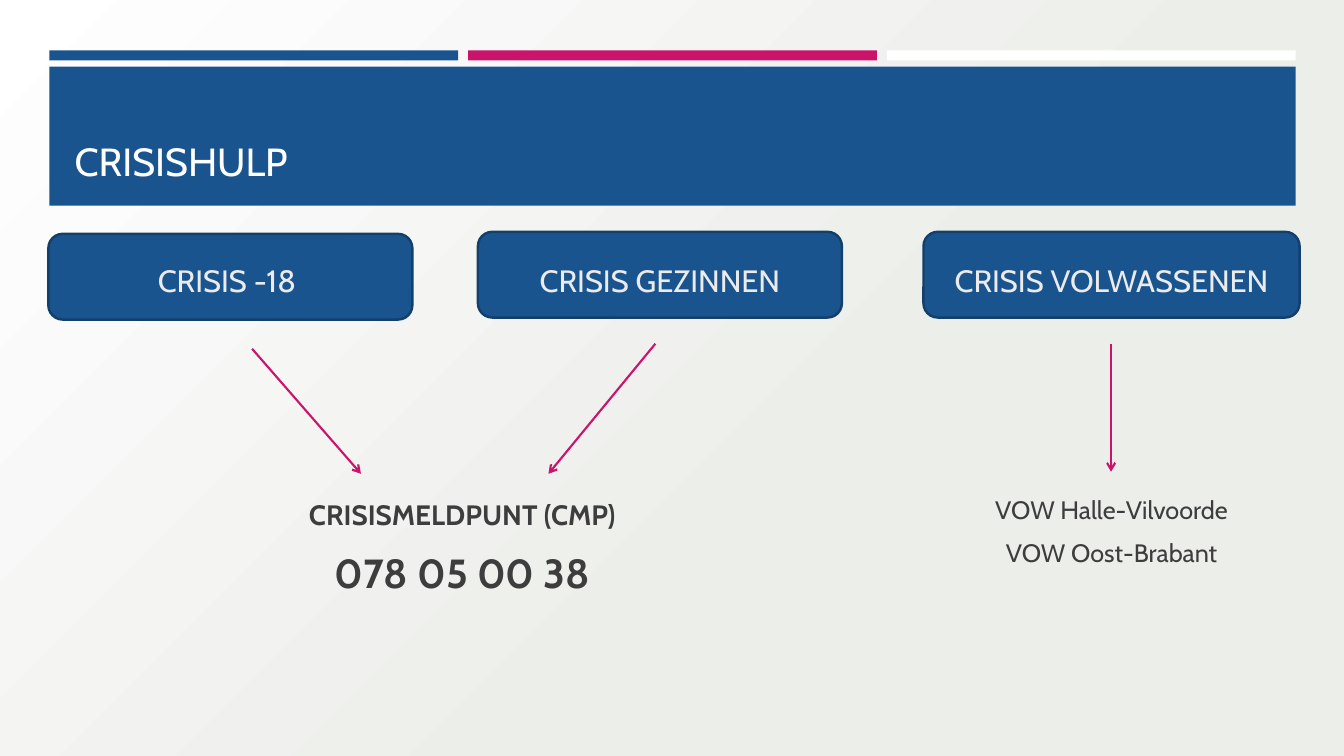
from lxml.etree import SubElement
from pptx import Presentation
from pptx.dml.color import RGBColor
from pptx.enum.shapes import MSO_CONNECTOR, MSO_SHAPE
from pptx.enum.text import MSO_ANCHOR, PP_ALIGN
from pptx.oxml.ns import qn
from pptx.util import Inches, Pt

COLORS = {
    "blue": "1A548E", "navy": "133F6B", "pink": "CA146B", "white": "FFFFFF",
    "mist": "ECEEEA", "pale": "EBEBEB", "ink": "3D3D3D",
}
FONT = "Cabin"

# Content: lengths in inches, text sizes in points
TITLE = "CRISISHULP"
STRIPES = ["blue", "pink", "white"]
TARGET_GROUPS = [  # text, left, top, width
    ("CRISIS -18 ", 0.48, 2.32, 3.61),
    ("CRISIS GEZINNEN", 4.74, 2.3, 3.61),
    ("CRISIS VOLWASSENEN", 9.16, 2.3, 3.73),
]
ARROWS = [  # start, end
    ((2.5, 3.46), (3.58, 4.7)),
    ((6.5, 3.41), (5.44, 4.7)),
    ((11.02, 3.41), (11.02, 4.68)),
]
CONTACTS = [  # box, bold, lines with their sizes
    ((2.5, 4.89, 4.17, 1.81), True,
     [("CRISISMELDPUNT (CMP)", 20), ("078 05 00 38", 29)]),
    ((8.94, 4.85, 4.17, 1.08), False,
     [("VOW Halle-Vilvoorde", 18), ("VOW Oost-Brabant", 18)]),
]

MARGIN, BAND_WIDTH = 0.49, 12.36
STRIPE_GAP = 0.1
STRIPE_WIDTH = (BAND_WIDTH - STRIPE_GAP * (len(STRIPES) - 1)) / len(STRIPES)
GROUP_HEIGHT = 0.85
GROUP_TEXT_BOTTOM = 3.0  # shared by all target groups


def color(name):
    return RGBColor.from_string(COLORS[name])


def add_block(kind, box, fill, outline=None):
    block = slide.shapes.add_shape(kind, *map(Inches, box))
    block.shadow.inherit = False
    block.fill.solid()
    block.fill.fore_color.rgb = color(fill)
    if outline:
        block.line.color.rgb = color(outline)
        block.line.width = Pt(1.75)
    else:
        block.line.fill.background()
    return block


def write(frame, lines, ink, align=PP_ALIGN.CENTER, bold=False):
    frame.word_wrap = True
    for i, (text, size) in enumerate(lines):
        paragraph = frame.add_paragraph() if i else frame.paragraphs[0]
        paragraph.text = text
        paragraph.alignment = align
        paragraph.space_before = Pt(0.2 * size)
        paragraph.space_after = Pt(6)
        paragraph.font.name = FONT
        paragraph.font.size = Pt(size)
        paragraph.font.bold = bold
        paragraph.font.color.rgb = color(ink)


def sit_at_bottom(frame, inset):
    frame.vertical_anchor = MSO_ANCHOR.BOTTOM
    frame.margin_top = 0
    frame.margin_bottom = Inches(inset)


prs = Presentation()
prs.slide_width, prs.slide_height = Inches(13.33), Inches(7.5)
slide = prs.slides.add_slide(prs.slide_layouts[6])

# Background gradient, from top left to bottom right
backdrop = slide.background.fill
backdrop.gradient()
backdrop.gradient_angle = 315
for stop, (position, name) in zip(backdrop.gradient_stops,
                                  [(0, "white"), (0.61, "mist")]):
    stop.position = position
    stop.color.rgb = color(name)

# Stripes above the title band
for i, name in enumerate(STRIPES):
    left = MARGIN + i * (STRIPE_WIDTH + STRIPE_GAP)
    add_block(MSO_SHAPE.RECTANGLE, (left, 0.5, STRIPE_WIDTH, 0.1), name)

# Title band
band = add_block(MSO_SHAPE.RECTANGLE, (MARGIN, 0.66, BAND_WIDTH, 1.38), "blue")
write(band.text_frame, [(TITLE, 28)], "white", PP_ALIGN.LEFT)
sit_at_bottom(band.text_frame, 0.21)
band.text_frame.margin_left = Inches(0.25)

# Target groups
for text, left, top, width in TARGET_GROUPS:
    group = add_block(MSO_SHAPE.ROUNDED_RECTANGLE,
                      (left, top, width, GROUP_HEIGHT), "blue", "navy")
    write(group.text_frame, [(text, 22)], "pale")
    sit_at_bottom(group.text_frame, top + GROUP_HEIGHT - GROUP_TEXT_BOTTOM)

# Arrows to the contacts
for start, end in ARROWS:
    arrow = slide.shapes.add_connector(MSO_CONNECTOR.STRAIGHT,
                                       *map(Inches, start + end))
    arrow.line.color.rgb = color("pink")
    arrow.line.width = Pt(1.5)
    SubElement(arrow.line._get_or_add_ln(), qn("a:tailEnd"), type="arrow")
    SubElement(arrow._element.spPr, qn("a:effectLst"))

# Contacts
for box, bold, lines in CONTACTS:
    contact = slide.shapes.add_textbox(*map(Inches, box))
    write(contact.text_frame, lines, "ink", bold=bold)

prs.save("out.pptx")
